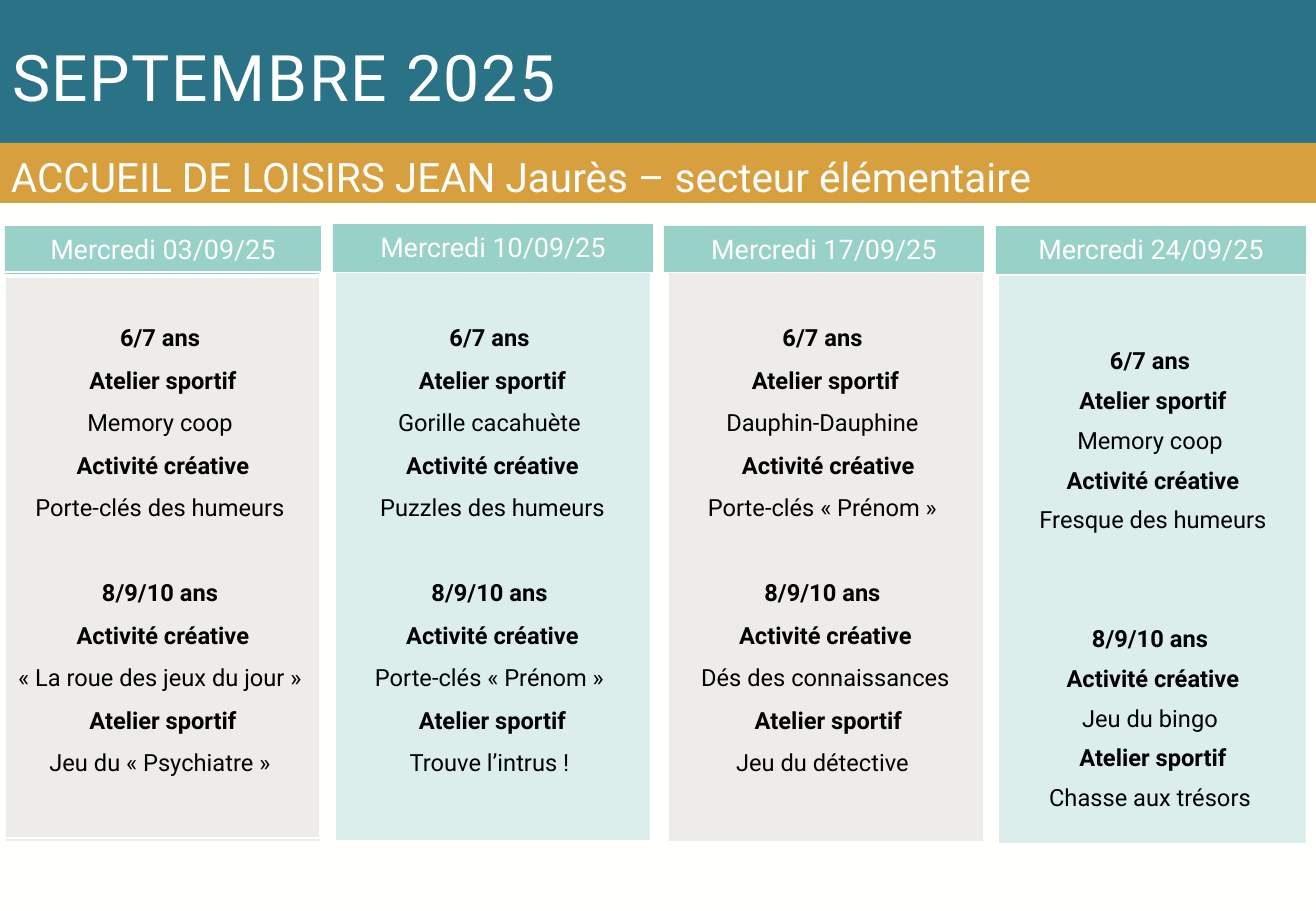
"""Build the September 2025 activity programme slide."""
import pptx
import pptx.util
import pptx.dml.color
import pptx.enum.shapes
import pptx.enum.text
from pptx.oxml.ns import qn
from lxml import etree

COLORS = {"page": "FFFFFE", "title": "2A7387", "club": "D89F3F", "mint": "98D1C8",
          "grey": "EEECE8", "white": "FFFFFF", "black": "000000"}
FONT = "Roboto"
PX = 7526
TITLE = "SEPTEMBRE 2025"
CLUB = "ACCUEIL DE LOISIRS JEAN Jaurès – secteur élémentaire"
BOLD_LINES = ("6/7 ans", "8/9/10 ans", "Atelier sportif", "Activité créative")

DAYS = [
    {"date": "Mercredi 03/09/25", "head": (5, 226, 316, 48), "panel": (5, 277, 316, 565),
     "body": (5, 275, 316, 566), "fill": "grey", "alpha": 100,
     "inset": 34, "spacing": 1.5, "gap": 25,
     "lines": ["6/7 ans ", "Atelier sportif", "Memory coop ", "Activité créative",
               "Porte-clés des humeurs ", "8/9/10 ans ", "Activité créative",
               "« La roue des jeux du jour » ", "Atelier sportif", "Jeu du « Psychiatre » "]},
    {"date": "Mercredi 10/09/25", "head": (333, 224, 320, 48), "panel": (335, 272, 316, 569),
     "body": (332, 275, 321, 566), "fill": "mint", "alpha": 35,
     "inset": 34, "spacing": 1.5, "gap": 25,
     "lines": ["6/7 ans ", "Atelier sportif", "Gorille cacahuète ", "Activité créative",
               "Puzzles des humeurs", "8/9/10 ans ", "Activité créative",
               "Porte-clés « Prénom » ", "Atelier sportif", "Trouve l’intrus ! "]},
    {"date": "Mercredi 17/09/25", "head": (664, 226, 320, 46), "panel": (668, 272, 316, 570),
     "body": (665, 275, 321, 569), "fill": "grey", "alpha": 100,
     "inset": 34, "spacing": 1.5, "gap": 25,
     "lines": ["6/7 ans ", "Atelier sportif", "Dauphin-Dauphine ", " Activité créative",
               "Porte-clés « Prénom » ", "8/9/10 ans ", "Activité créative",
               "Dés des connaissances", " Atelier sportif", "Jeu du détective "]},
    {"date": "Mercredi 24/09/25", "head": (996, 226, 310, 48), "panel": (998, 275, 309, 569),
     "body": (998, 275, 310, 566), "fill": "mint", "alpha": 35,
     "inset": 60, "spacing": 1.4, "gap": 47,
     "lines": ["6/7 ans ", "Atelier sportif", "Memory coop ", "Activité créative",
               "Fresque des humeurs", "8/9/10 ans ", "Activité créative",
               "Jeu du bingo ", "Atelier sportif", "Chasse aux trésors "]},
]
OUTLINE = (4, 272, 316, 566)

ALIGN = pptx.enum.text.PP_ALIGN
ANCHOR = pptx.enum.text.MSO_ANCHOR


def rgb(name):
    return pptx.dml.color.RGBColor.from_string(COLORS[name])


def set_all(target, values):
    for name, value in values.items():
        setattr(target, name, value)


def place(sp, box):
    set_all(sp, dict(zip(("left", "top", "width", "height"), (v * PX for v in box))))


def paint(sp, color, alpha=100):
    sp.fill.solid()
    sp.fill.fore_color.rgb = rgb(color)
    if alpha < 100:
        clr = sp.fill._xPr.find(qn("a:solidFill"))[0]
        etree.SubElement(clr, qn("a:alpha")).set("val", str(alpha * 1000))


def add_rect(s, box):
    sp = s.shapes.add_shape(pptx.enum.shapes.MSO_SHAPE.RECTANGLE, 0, 0, 0, 0)
    place(sp, box)
    sp.shadow.inherit = False
    sp.line.fill.background()
    return sp


def add_panel(s, box):
    sp = add_rect(s, box)
    sp.line.color.rgb = rgb("page")
    sp.line.width = pptx.util.Pt(0.75)
    return sp


def frame(sp, top, bottom=6, anchor=ANCHOR.TOP):
    tf = sp.text_frame
    set_all(tf, {"word_wrap": True, "auto_size": pptx.enum.text.MSO_AUTO_SIZE.NONE,
                 "vertical_anchor": anchor, "margin_left": 12 * PX, "margin_right": 12 * PX,
                 "margin_top": top * PX, "margin_bottom": bottom * PX})
    return tf


def write(p, text, size, color, align=ALIGN.CENTER, bold=False, spacing=1.0, before=0):
    pPr = p._p.get_or_add_pPr()
    pPr.set("marL", "0")
    pPr.set("indent", "0")
    etree.SubElement(pPr, qn("a:buNone"))
    set_all(p, {"alignment": align, "line_spacing": spacing,
                "space_before": pptx.util.Pt(before), "space_after": pptx.util.Pt(0)})
    r = p.add_run()
    r.text = text
    set_all(r.font, {"name": FONT, "size": pptx.util.Pt(size), "bold": bold})
    r.font.color.rgb = rgb(color)
    return r


def main():
    prs = pptx.Presentation()
    prs.slide_width, prs.slide_height = 1316 * PX, 911 * PX
    s = prs.slides.add_slide(prs.slide_layouts[4])
    s.background.fill.solid()
    s.background.fill.fore_color.rgb = rgb("page")

    title, *bodies = s.placeholders
    place(title, (0, 0, 1317, 143))
    paint(title, "title")
    tf = frame(title, 14, anchor=ANCHOR.MIDDLE)
    r = write(tf.paragraphs[0], TITLE, 38, "white", ALIGN.LEFT)
    r.font._element.set("spc", "100")

    club = add_rect(s, (-1, 143, 1318, 60))
    paint(club, "club")
    write(frame(club, 9).paragraphs[0], CLUB, 24, "page", ALIGN.LEFT)

    for day, body in zip(DAYS, bodies):
        paint(add_panel(s, day["panel"]), day["fill"], day["alpha"])
        head = add_rect(s, day["head"])
        paint(head, "mint")
        write(frame(head, 7).paragraphs[0], day["date"], 16, "page")

        s.shapes._spTree.append(body._element)
        place(body, day["body"])
        tf = frame(body, day["inset"])
        for i, line in enumerate(day["lines"]):
            p = tf.add_paragraph() if i else tf.paragraphs[0]
            before = day["gap"] if line.startswith("8/9/10") else 0
            write(p, line, 14, "black", bold=line.strip() in BOLD_LINES,
                  spacing=day["spacing"], before=before)

    add_panel(s, OUTLINE).fill.background()
    prs.save("out.pptx")


if __name__ == "__main__":
    main()
